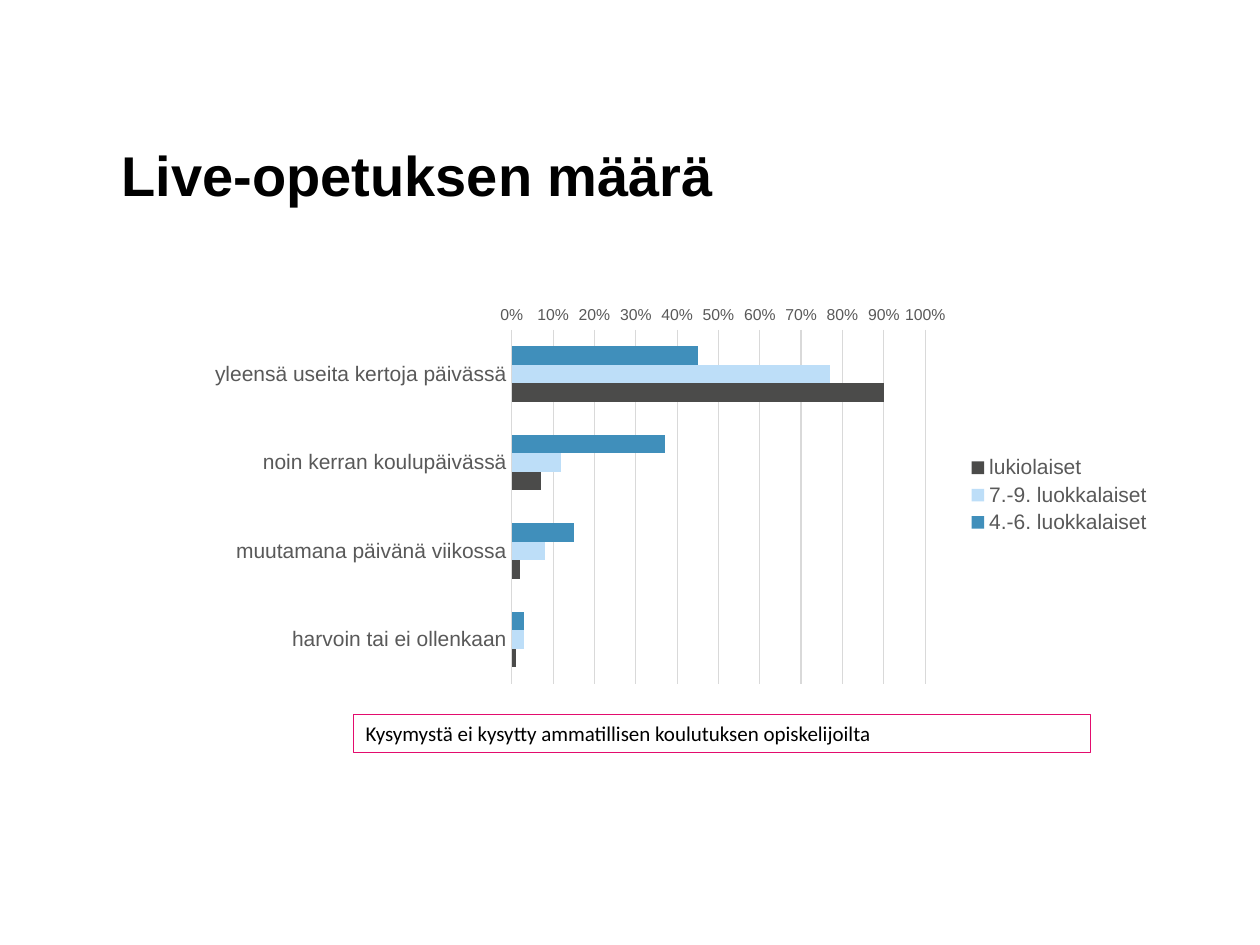
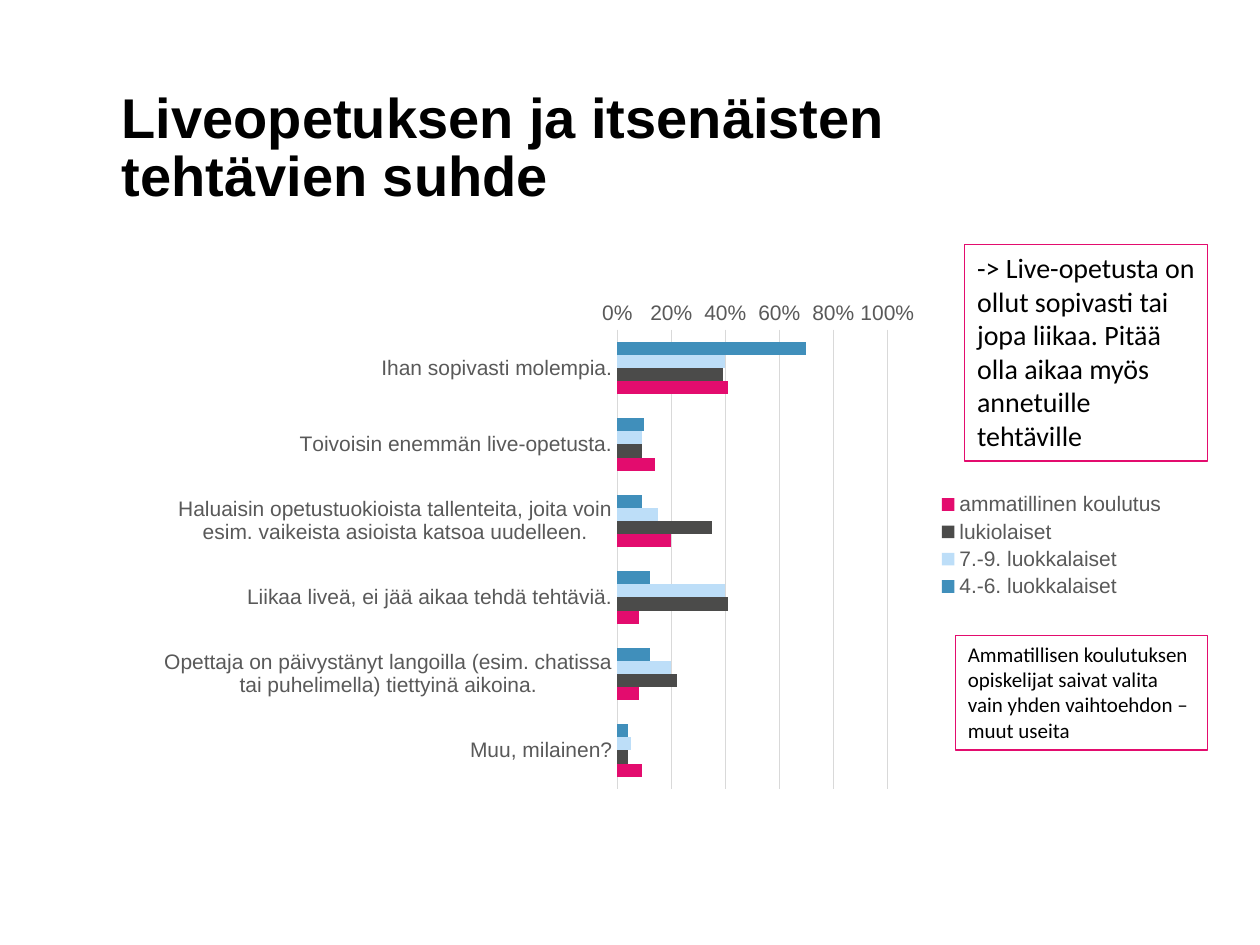
from dataclasses import dataclass

import pptx
import pptx.chart.data
import pptx.dml.color
import pptx.enum.chart
import pptx.enum.text
import pptx.util

Pt = pptx.util.Pt
RGBColor = pptx.dml.color.RGBColor

BLACK = RGBColor(0x00, 0x00, 0x00)
GREY = RGBColor(0x59, 0x59, 0x59)
PALE = RGBColor(0xD9, 0xD9, 0xD9)
BLUE = RGBColor(0x40, 0x8F, 0xBB)
SKY = RGBColor(0xBD, 0xDE, 0xF8)
DARK = RGBColor(0x4B, 0x4B, 0x4A)
PINK = RGBColor(0xE3, 0x0C, 0x6E)
HEAD_FONT = "Arial"
NOTE_FONT = "Calibri"
GROUPS = {
    "4.-6. luokkalaiset": BLUE,
    "7.-9. luokkalaiset": SKY,
    "lukiolaiset": DARK,
    "ammatillinen koulutus": PINK,
}


@dataclass
class Box:
    left: float
    top: float
    width: float
    height: float

    def spot(self) -> tuple:
        return Pt(self.left), Pt(self.top), Pt(self.width), Pt(self.height)


@dataclass
class Note:
    box: Box
    text: str
    size: int = 12


@dataclass
class Survey:
    title: str
    box: Box
    step: float
    scale: int
    rows: dict
    notes: list


TITLE_BOX = Box(69.6, 39.6, 584, 79.2)

SURVEYS = [
    Survey(
        "Live-opetuksen määrä",
        Box(111.8, 170.64, 553.5, 224.64),
        0.1,
        9,
        {
            "yleensä useita kertoja päivässä": (0.45, 0.77, 0.9),
            "noin kerran koulupäivässä": (0.37, 0.12, 0.07),
            "muutamana päivänä viikossa": (0.15, 0.08, 0.02),
            "harvoin tai ei ollenkaan": (0.03, 0.03, 0.01),
        },
        [
            Note(
                Box(201.9, 408.4, 421.2, 21.8),
                "Kysymystä ei kysytty ammatillisen koulutuksen opiskelijoilta",
            )
        ],
    ),
    Survey(
        "Liveopetuksen ja itsenäisten tehtävien suhde",
        Box(82, 167.04, 591.6, 289.44),
        0.2,
        12,
        {
            "Ihan sopivasti molempia.": (0.7, 0.4, 0.39, 0.41),
            "Toivoisin enemmän live-opetusta.": (0.1, 0.09, 0.09, 0.14),
            "Haluaisin opetustuokioista tallenteita, joita voin esim. "
            "vaikeista asioista katsoa uudelleen.": (0.09, 0.15, 0.35, 0.2),
            "Liikaa liveä, ei jää aikaa tehdä tehtäviä.": (0.12, 0.4, 0.41, 0.08),
            "Opettaja on päivystänyt langoilla (esim. chatissa tai "
            "puhelimella) tiettyinä aikoina.": (0.12, 0.2, 0.22, 0.08),
            "Muu, milainen?": (0.04, 0.05, 0.04, 0.09),
        },
        [
            Note(
                Box(546, 363.1, 144, 65.5),
                "Ammatillisen koulutuksen opiskelijat saivat valita "
                "vain yhden vaihtoehdon – muut useita",
            ),
            Note(
                Box(551.3, 139.6, 138.9, 123.8),
                "-> Live-opetusta on ollut sopivasti tai jopa liikaa. "
                "Pitää olla aikaa myös annetuille tehtäville",
                16,
            ),
        ],
    ),
]


def style(font, name: str, size: int, color: RGBColor, bold: bool = False) -> None:
    """Set the face, size, colour and weight of a font."""
    font.name = name
    font.size = Pt(size)
    font.bold = bold
    font.color.rgb = color


def add_title(slide, text: str) -> None:
    """Draw the slide title, resting on the base of its box."""
    frame = slide.shapes.add_textbox(*TITLE_BOX.spot()).text_frame
    frame.word_wrap = True
    frame.vertical_anchor = pptx.enum.text.MSO_ANCHOR.BOTTOM
    frame.margin_left = frame.margin_top = frame.margin_bottom = 0
    para = frame.paragraphs[0]
    para.text = text
    para.line_spacing = Pt(33)
    style(para.font, HEAD_FONT, 32, BLACK, True)


def add_note(slide, note: Note) -> None:
    """Draw a framed remark."""
    shape = slide.shapes.add_textbox(*note.box.spot())
    shape.line.color.rgb = PINK
    shape.line.width = Pt(0.75)
    frame = shape.text_frame
    frame.word_wrap = True
    para = frame.paragraphs[0]
    para.text = note.text
    style(para.font, NOTE_FONT, note.size, BLACK)


def style_axis(axis, size: int) -> None:
    """Give an axis its labels and drop the tick marks."""
    none = pptx.enum.chart.XL_TICK_MARK.NONE
    axis.major_tick_mark = axis.minor_tick_mark = none
    style(axis.tick_labels.font, HEAD_FONT, size, GREY)


def thin_line(line) -> None:
    """Make a chart line thin and pale."""
    line.color.rgb = PALE
    line.width = Pt(0.75)


def add_bars(slide, survey: Survey) -> None:
    """Draw the answers as clustered bars, first answer on top."""
    data = pptx.chart.data.CategoryChartData(number_format="0%")
    data.categories = list(survey.rows)
    for name, values in zip(GROUPS, zip(*survey.rows.values())):
        data.add_series(name, values)
    kind = pptx.enum.chart.XL_CHART_TYPE.BAR_CLUSTERED
    chart = slide.shapes.add_chart(kind, *survey.box.spot(), data).chart
    chart.has_title = False
    style(chart.font, HEAD_FONT, 12, BLACK)

    plot = chart.plots[0]
    plot.gap_width = 182
    plot.vary_by_categories = False
    for series in plot.series:
        series.format.fill.solid()
        series.format.fill.fore_color.rgb = GROUPS[series.name]

    names = chart.category_axis
    names.reverse_order = True
    style_axis(names, 12)
    thin_line(names.format.line)

    scale = chart.value_axis
    scale.minimum_scale, scale.maximum_scale = 0, 1
    scale.major_unit = survey.step
    scale.tick_labels.number_format = "0%"
    scale.tick_labels.number_format_is_linked = False
    style_axis(scale, survey.scale)
    scale.format.line.fill.background()
    thin_line(scale.major_gridlines.format.line)

    chart.has_legend = True
    chart.legend.position = pptx.enum.chart.XL_LEGEND_POSITION.RIGHT
    chart.legend.include_in_layout = False
    style(chart.legend.font, HEAD_FONT, 12, GREY)


def main() -> None:
    """Build and save the survey slides."""
    deck = pptx.Presentation()
    deck.slide_width, deck.slide_height = Pt(720), Pt(540)
    for survey in SURVEYS:
        slide = deck.slides.add_slide(deck.slide_layouts[6])
        add_title(slide, survey.title)
        add_bars(slide, survey)
        for note in survey.notes:
            add_note(slide, note)
    deck.save("out.pptx")


if __name__ == "__main__":
    main()
